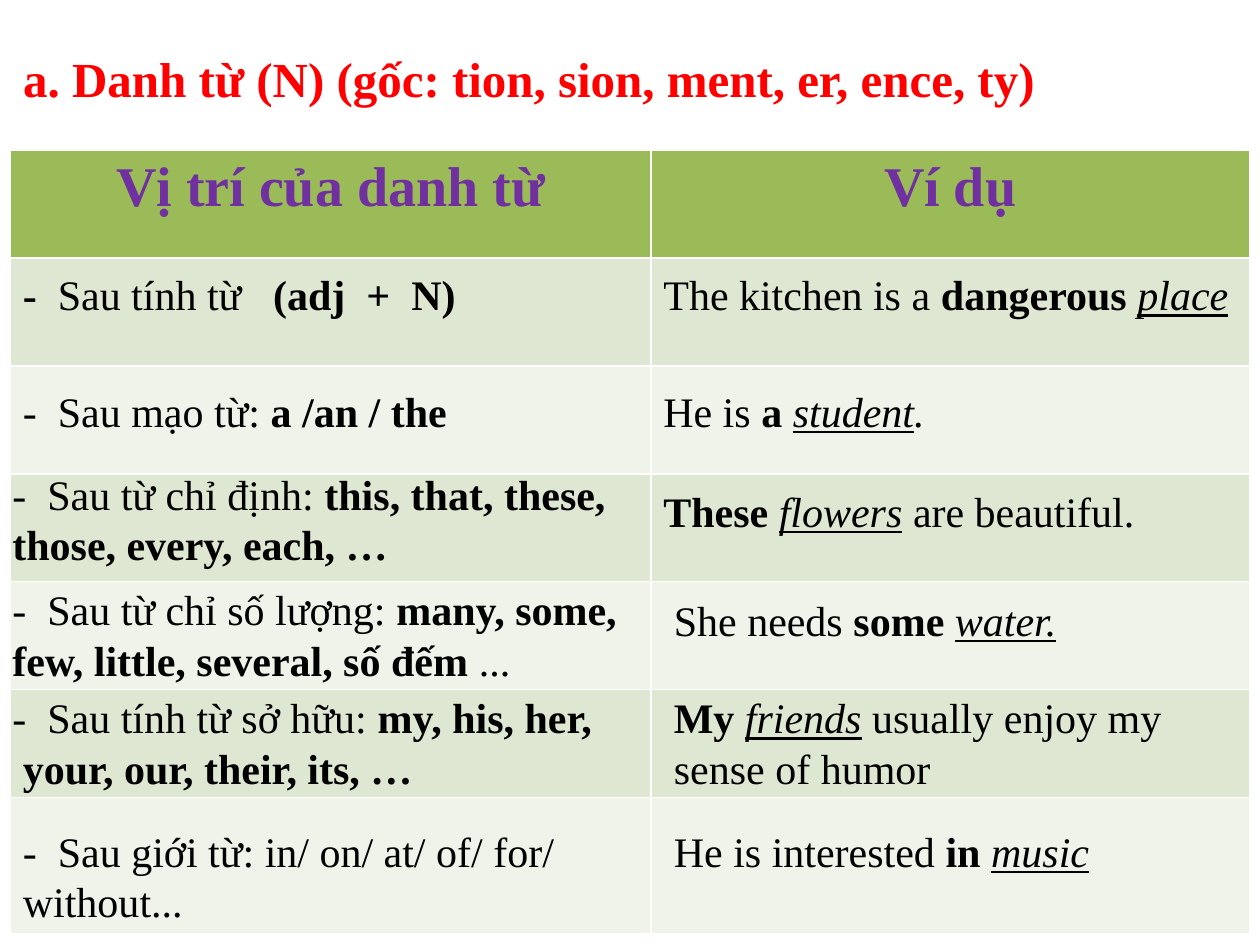
from dataclasses import dataclass

from lxml import etree
from pptx import Presentation
from pptx import util as u
from pptx.dml.color import RGBColor
from pptx.enum import text
from pptx.oxml import ns

Pt = u.Pt


@dataclass(frozen=True)
class Theme:
    font: str = "Times New Roman"
    title_size: int = 28
    header_size: int = 32
    body_size: int = 24
    title: str = "FF0000"
    header: str = "7030A0"
    body: str = "000000"
    header_fill: str = "9BBB59"
    band_fills: tuple = ("DEE7D1", "EFF3EA")
    border: str = "FFFFFF"


THEME = Theme()

TITLE = "a. Danh từ (N) (gốc: tion, sion, ment, er, ence, ty)"
HEADERS = ("Vị trí của danh từ", "Ví dụ")
COLUMN_WIDTHS = (366, 342)
ROW_HEIGHTS = (61.7,) * 6 + (78,)
ONE_LINE, TWO_LINES, THREE_LINES = 36, 65.5, 94.3

# Each entry: (left, top, width, height), hanging indent, runs of (wording, style);
# style letters are b = bold, i = italic, u = underline
ENTRIES = [
    # After an adjective
    ((6, 150, 330, ONE_LINE), 0,
     [("-  ", "b"), ("Sau tính từ   ", ""), ("(adj  +  N)", "b")]),
    ((372, 150, 342, ONE_LINE), 0,
     [("The kitchen is a ", ""), ("dangerous ", "b"), ("place", "iu")]),
    # After an article
    ((6, 216.7, 354, TWO_LINES), 0,
     [("-  Sau mạo từ:", ""), (" a /an / the", "b")]),
    ((372, 216.7, 324, TWO_LINES), 0,
     [("He is ", ""), ("a ", "b"), ("student", "iu"), (".", "i")]),
    # After a demonstrative
    ((0, 264, 360, THREE_LINES), 0,
     [("-  Sau từ chỉ định: ", ""),
      ("this, that, these, those, every, each, …", "b")]),
    ((372, 273.6, 330, TWO_LINES), 0,
     [("These ", "b"), ("flowers", "iu"), (" ", "i"), ("are beautiful.", "")]),
    # After a quantifier
    ((0, 330, 366, THREE_LINES), 0,
     [("-  Sau từ chỉ số lượng: ", ""),
      ("many, some, few, little, several, số đếm", "b"), (" ...", "")]),
    ((378, 336, 324, TWO_LINES), 0,
     [("She needs ", ""), ("some ", "b"), ("water.", "iu")]),
    # After a possessive
    ((0, 391.7, 360, THREE_LINES), 6,
     [("-  Sau tính từ sở hữu: ", ""),
      ("my, his, her, your, our, their, its, …", "b")]),
    ((378, 391.7, 330, THREE_LINES), 0,
     [("My ", "b"), ("friends", "iu"), (" usually enjoy my sense of humor", "")]),
    # After a preposition
    ((6, 468, 360, THREE_LINES), 0,
     [("-  Sau giới từ: in/ on/ at/ of/ for/ without...", "")]),
    ((378, 468, 318, TWO_LINES), 0,
     [("He is interested ", ""), ("in ", "b"), ("music", "iu")]),
]


def set_font(font, size, color, bold=None):
    font.name = THEME.font
    font.size = Pt(size)
    font.color.rgb = RGBColor.from_string(color)
    font.bold = bold


def add_title(slide):
    title = slide.shapes.title
    title.left, title.top, title.width, title.height = map(Pt, (6, 24, 702, 41))
    frame = title.text_frame
    frame.text = TITLE
    frame.vertical_anchor = text.MSO_ANCHOR.TOP
    frame.auto_size = text.MSO_AUTO_SIZE.SHAPE_TO_FIT_TEXT
    paragraph = frame.paragraphs[0]
    paragraph.alignment = text.PP_ALIGN.LEFT
    set_font(paragraph.font, THEME.title_size, THEME.title, True)


def set_borders(cell):
    properties = cell._tc.get_or_add_tcPr()
    for position, side in enumerate(("lnL", "lnR", "lnT", "lnB")):
        line = etree.Element(ns.qn(f"a:{side}"), w=str(Pt(1)))
        fill = etree.SubElement(line, ns.qn("a:solidFill"))
        etree.SubElement(fill, ns.qn("a:srgbClr"), val=THEME.border)
        properties.insert(position, line)


def add_grid(slide):
    table = slide.shapes.add_table(
        len(ROW_HEIGHTS), len(COLUMN_WIDTHS), Pt(6), Pt(85.7),
        Pt(sum(COLUMN_WIDTHS)), Pt(sum(ROW_HEIGHTS))).table
    for column, width in zip(table.columns, COLUMN_WIDTHS):
        column.width = Pt(width)
    for index, (row, height) in enumerate(zip(table.rows, ROW_HEIGHTS)):
        row.height = Pt(height)
        color = THEME.band_fills[(index - 1) % 2] if index else THEME.header_fill
        for cell in row.cells:
            cell.fill.solid()
            cell.fill.fore_color.rgb = RGBColor.from_string(color)
            set_borders(cell)
    for cell, heading in zip(table.rows[0].cells, HEADERS):
        cell.text = heading
        paragraph = cell.text_frame.paragraphs[0]
        paragraph.alignment = text.PP_ALIGN.CENTER
        set_font(paragraph.font, THEME.header_size, THEME.header, True)


def add_entry(slide, box, hanging, runs):
    frame = slide.shapes.add_textbox(*map(Pt, box)).text_frame
    frame.word_wrap = True
    frame.auto_size = text.MSO_AUTO_SIZE.SHAPE_TO_FIT_TEXT
    paragraph = frame.paragraphs[0]
    set_font(paragraph.font, THEME.body_size, THEME.body)
    if hanging:
        properties = paragraph._p.get_or_add_pPr()
        properties.set("marL", str(Pt(hanging)))
        properties.set("indent", str(-Pt(hanging)))
    for wording, style in runs:
        run = paragraph.add_run()
        run.text = wording
        run.font.bold = "b" in style
        run.font.italic = "i" in style
        run.font.underline = "u" in style


def main():
    presentation = Presentation()
    presentation.slide_width, presentation.slide_height = Pt(720), Pt(540)
    slide = presentation.slides.add_slide(presentation.slide_layouts[5])
    add_title(slide)
    add_grid(slide)
    for box, hanging, runs in ENTRIES:
        add_entry(slide, box, hanging, runs)
    presentation.save("out.pptx")


if __name__ == "__main__":
    main()
